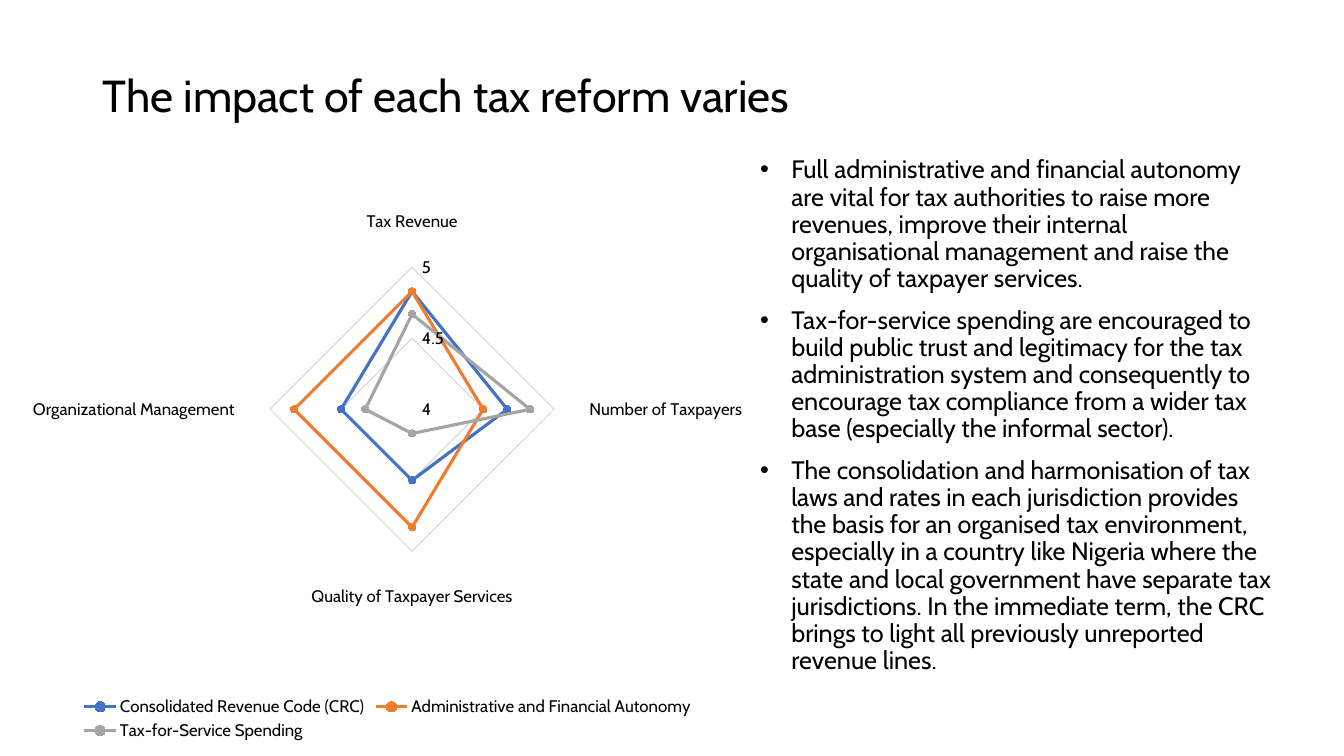
from lxml.etree import SubElement
from pptx import Presentation
from pptx.chart.data import CategoryChartData
from pptx.dml.color import RGBColor
from pptx.enum.chart import XL_CHART_TYPE, XL_LEGEND_POSITION, XL_MARKER_STYLE, XL_TICK_MARK
from pptx.enum.text import MSO_ANCHOR
from pptx.oxml.ns import qn
from pptx.util import Inches, Pt

COLORS = {
    "text": "000000",
    "grid": "D9D9D9",
    "code": "4472C4",
    "autonomy": "ED7D31",
    "spending": "A5A5A5",
}

TITLE = "The impact of each tax reform varies"
FINDINGS = [
    "Full administrative and financial autonomy are vital for tax authorities to raise more "
    "revenues, improve their internal organisational management and raise the quality of "
    "taxpayer services.",
    "Tax-for-service spending are encouraged to build public trust and legitimacy for the tax "
    "administration system and consequently to encourage tax compliance from a wider tax base "
    "(especially the informal sector).",
    "The consolidation and harmonisation of tax laws and rates in each jurisdiction provides "
    "the basis for an organised tax environment, especially in a country like Nigeria where "
    "the state and local government have separate tax jurisdictions. In the immediate term, "
    "the CRC brings to light all previously unreported revenue lines.",
]
OUTCOMES = [
    "Tax Revenue",
    "Number of Taxpayers",
    "Quality of Taxpayer Services",
    "Organizational Management",
]
REFORMS = [
    ("Consolidated Revenue Code (CRC)", "code", (4.83, 4.67, 4.5, 4.5)),
    ("Administrative and Financial Autonomy", "autonomy", (4.83, 4.5, 4.83, 4.83)),
    ("Tax-for-Service Spending", "spending", (4.67, 4.83, 4.17, 4.33)),
]


class SlideBuilder:
    """Hold the style and the current slide, and add its elements."""

    font_name = "Cabin"

    def __init__(self, page):
        self.page = page

    def color(self, name):
        return RGBColor.from_string(COLORS[name])

    def style_font(self, font, size):
        font.name = self.font_name
        font.size = Pt(size)
        font.color.rgb = self.color("text")

    def add_text(self, bounds, paragraphs, size, anchor=MSO_ANCHOR.TOP, space_before=0):
        box = self.page.shapes.add_textbox(*map(Inches, bounds))
        frame = box.text_frame
        frame.word_wrap = True
        frame.vertical_anchor = anchor
        frame.text = "\n".join(paragraphs)
        for paragraph in frame.paragraphs:
            paragraph.line_spacing = 0.9
            paragraph.space_before = Pt(space_before)
            for span in paragraph.runs:
                self.style_font(span.font, size)
        return box

    def add_bullets(self, bounds, paragraphs, size):
        box = self.add_text(bounds, paragraphs, size, space_before=10)
        indent = Inches(0.31)
        for paragraph in box.text_frame.paragraphs:
            properties = paragraph._p.get_or_add_pPr()
            properties.set("marL", str(indent))
            properties.set("indent", str(-indent))
            SubElement(properties, qn("a:buFont"), typeface="Arial")
            SubElement(properties, qn("a:buChar"), char="•")

    def style_axis(self, axis, tick_mark):
        axis.has_major_gridlines = True
        gridline = axis.major_gridlines.format.line
        gridline.color.rgb = self.color("grid")
        gridline.width = Pt(0.75)
        axis.format.line.fill.background()
        axis.major_tick_mark = tick_mark
        axis.minor_tick_mark = XL_TICK_MARK.NONE
        axis.tick_labels.number_format = "General"
        axis.tick_labels.number_format_is_linked = False
        self.style_font(axis.tick_labels.font, 12)

    def style_series(self, series, color_name):
        color = self.color(color_name)
        series.smooth = False
        series.format.line.color.rgb = color
        series.format.line.width = Pt(2.25)
        marker = series.marker
        marker.style = XL_MARKER_STYLE.CIRCLE
        marker.size = 5
        marker.format.fill.solid()
        marker.format.fill.fore_color.rgb = color
        marker.format.line.color.rgb = color

    def add_radar(self, bounds, categories, reforms):
        data = CategoryChartData()
        data.categories = categories
        for name, _, values in reforms:
            data.add_series(name, values)
        chart = self.page.shapes.add_chart(
            XL_CHART_TYPE.RADAR_MARKERS, *map(Inches, bounds), data
        ).chart
        chart.has_title = False
        self.style_font(chart.font, 12)
        chart.has_legend = True
        chart.legend.position = XL_LEGEND_POSITION.BOTTOM
        chart.legend.include_in_layout = False
        self.style_font(chart.legend.font, 12)
        self.style_axis(chart.category_axis, XL_TICK_MARK.NONE)
        scale = chart.value_axis
        self.style_axis(scale, XL_TICK_MARK.OUTSIDE)
        scale.minimum_scale, scale.maximum_scale, scale.major_unit = 4, 5, 0.5
        plot = chart.plots[0]
        plot.vary_by_categories = False
        for series, (_, color_name, _) in zip(plot.series, reforms):
            self.style_series(series, color_name)


def main():
    deck = Presentation()
    deck.slide_width, deck.slide_height = Inches(13.33), Inches(7.5)
    builder = SlideBuilder(deck.slides.add_slide(deck.slide_layouts[6]))
    builder.add_text((0.92, 0.5, 8.71, 0.76), [TITLE], 32, MSO_ANCHOR.BOTTOM)
    builder.add_bullets((7.44, 1.51, 5.31, 5.59), FINDINGS, 18)
    builder.add_radar((0.18, 1.32, 7.33, 6.07), OUTCOMES, REFORMS)
    deck.save("out.pptx")


if __name__ == "__main__":
    main()
